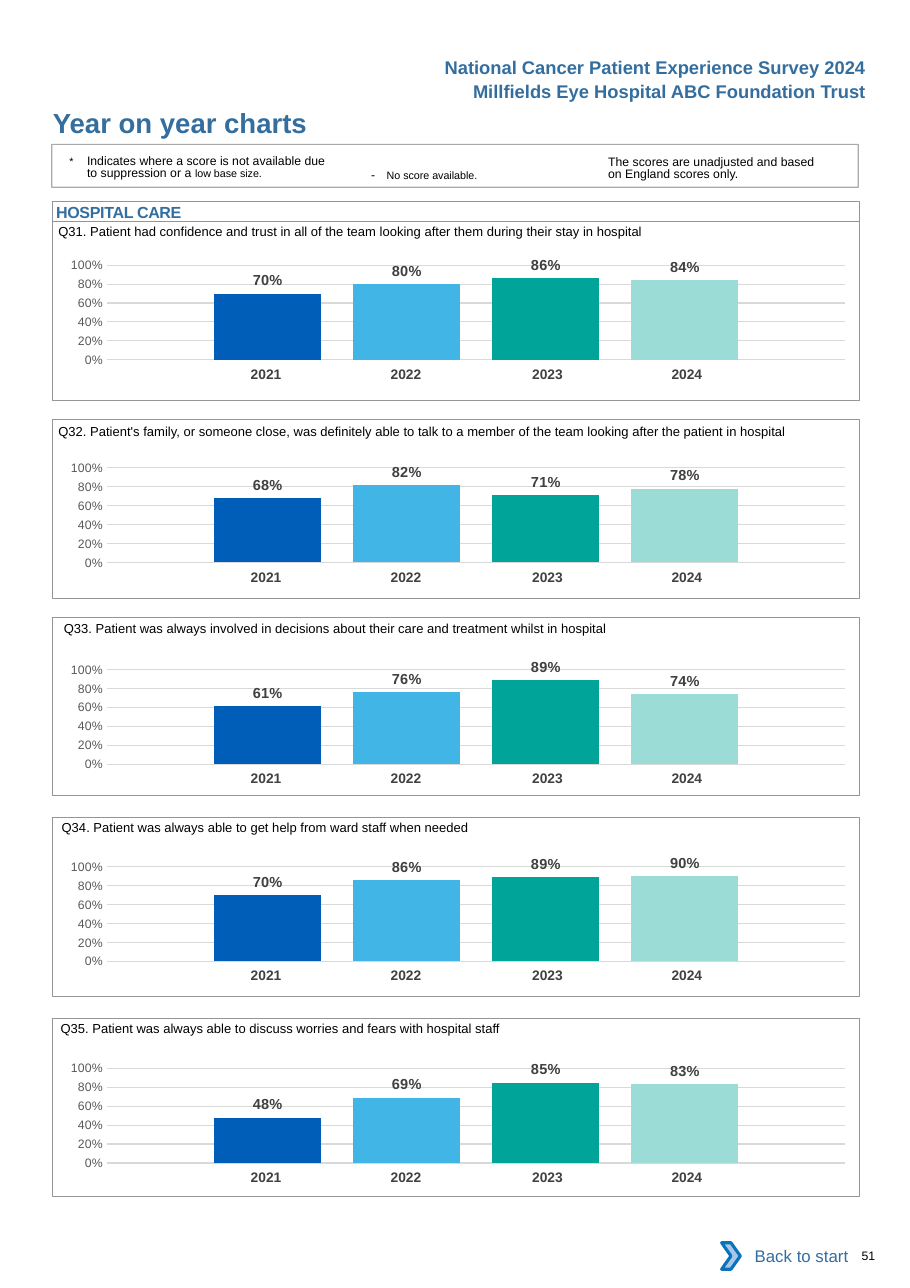
from lxml import etree
from pptx import Presentation
from pptx.chart.data import CategoryChartData
from pptx.dml.color import RGBColor
from pptx.enum import chart as ch, shapes, text
from pptx.oxml import parse_xml
from pptx.oxml.ns import nsdecls, qn
from pptx.util import Inches, Pt

BLUE = RGBColor(0x33, 0x6E, 0x9F)
BLACK = RGBColor(0, 0, 0)
WHITE = RGBColor(0xFF, 0xFF, 0xFF)
FRAME = RGBColor(0x93, 0x95, 0x98)
GRID = RGBColor(0xD9, 0xD9, 0xD9)
AXIS_TEXT = RGBColor(0x59, 0x59, 0x59)
LABEL_TEXT = RGBColor(0x40, 0x40, 0x40)
YEAR_TEXT = RGBColor(0x41, 0x40, 0x42)
ARROW_FILL = RGBColor(0xA8, 0xC7, 0xE9)
ARROW_LINE = RGBColor(0x0A, 0x74, 0xBB)
YEAR_COLORS = {
    "2021": RGBColor(0x00, 0x5E, 0xB8),
    "2022": RGBColor(0x41, 0xB6, 0xE6),
    "2023": RGBColor(0x00, 0xA4, 0x99),
    "2024": RGBColor(0x9C, 0xDC, 0xD7),
}
NO_STYLE = "{2D5ABB26-0587-4C30-8999-92F81FD0307C}"

prs = Presentation()
prs.slide_width, prs.slide_height = Inches(8.26), Inches(11.69)
slide = prs.slides.add_slide(prs.slide_layouts[6])


def write(box, lines, color=BLACK, bold=False, align=text.PP_ALIGN.LEFT,
          insets=(0, 0, 0, 0), spacing=None):
    """Fill one paragraph; each line is a list of (words, size) runs."""
    frame = box.text_frame
    frame.word_wrap = True
    frame.margin_left, frame.margin_top, frame.margin_right, frame.margin_bottom = map(Inches, insets)
    paragraph = frame.paragraphs[0]
    paragraph.alignment = align
    paragraph.line_spacing = spacing
    for number, line in enumerate(lines):
        if number:
            paragraph.add_line_break()
        for words, size in line:
            run = paragraph.add_run()
            run.text = words
            run.font.size, run.font.name, run.font.bold = Pt(size), "Arial", bold
            run.font.color.rgb = color
    return paragraph


def add_box(left, top, width, height, line=FRAME, weight=0.5, fill=None,
            kind=shapes.MSO_SHAPE.RECTANGLE):
    box = slide.shapes.add_shape(kind, Inches(left), Inches(top), Inches(width), Inches(height))
    box.shadow.inherit = False
    if fill is None:
        box.fill.background()
    else:
        box.fill.solid()
        box.fill.fore_color.rgb = fill
    if line is None:
        box.line.fill.background()
    else:
        box.line.color.rgb = line
        box.line.width = Pt(weight)
    return box


# Survey and trust names
for top, heading in [(0.46, "National Cancer Patient Experience Survey 2024"),
                     (0.68, "Millfields Eye Hospital ABC Foundation Trust")]:
    header = slide.shapes.add_textbox(Inches(3.76), Inches(top), Inches(4.2), Inches(0.3))
    write(header, [[(heading, 12)]], BLUE, True, text.PP_ALIGN.RIGHT, (0.1, 0.05, 0.1, 0.05))

# Page title
title = slide.shapes.add_textbox(Inches(0.48), Inches(0.96), Inches(4.5), Inches(0.3))
write(title, [[("Year on year charts", 18)]], BLUE, True)

# Notes on the scores
notes_frame = add_box(0.47, 1.31, 7.32, 0.39, weight=0.75)
frame_color = notes_frame.line.fill.fore_color._xFill.find(qn("a:srgbClr"))
etree.SubElement(frame_color, qn("a:alpha")).set("val", "80000")

suppressed = slide.shapes.add_textbox(Inches(0.63), Inches(1.38), Inches(2.72), Inches(0.3))
hanging = write(suppressed,
                [[("*\t", 7), ("Indicates where a score is not available due", 8)],
                 [("to suppression or a ", 8), ("low base size.", 7)]],
                insets=(0, 0.03, 0, 0), spacing=Pt(8.1))
hanging._p.get_or_add_pPr().set("marL", str(Inches(0.16)))
hanging._p.get_or_add_pPr().set("indent", str(-Inches(0.16)))

missing = slide.shapes.add_textbox(Inches(3.37), Inches(1.52), Inches(1.73), Inches(0.13))
dash = write(missing, [[("- ", 8), ("No score available.", 7)]]).runs[0]
dash.font._element.set("spc", "260")

unadjusted = slide.shapes.add_textbox(Inches(5.52), Inches(1.39), Inches(2.01), Inches(0.27))
write(unadjusted, [[("The scores are unadjusted and based", 8)], [("on England scores only.", 8)]],
      insets=(0, 0.03, 0, 0), spacing=Pt(8.1))

# Section heading
section = add_box(0.48, 1.83, 7.32, 0.18)
section.text_frame.vertical_anchor = text.MSO_ANCHOR.TOP
section_text = write(section, [[("HOSPITAL CARE", 10.5)]], BLUE, True, insets=(0.03, 0.01, 0, 0))
section_text.runs[0].font._element.set("spc", "-20")

# Questions: panel top, chart top, question left and top, wording, score per year
questions = [
    (2.01, 2.22, 0.53, 1.94, "Q31. Patient had confidence and trust in all of the team looking after them "
     "during their stay in hospital", (0.70, 0.80, 0.86, 0.84)),
    (3.81, 4.06, 0.53, 3.75, "Q32. Patient's family, or someone close, was definitely able to talk to a member "
     "of the team looking after the patient in hospital", (0.68, 0.82, 0.71, 0.78)),
    (5.60, 5.89, 0.58, 5.54, "Q33. Patient was always involved in decisions about their care and treatment "
     "whilst in hospital", (0.61, 0.76, 0.89, 0.74)),
    (7.42, 7.68, 0.56, 7.35, "Q34. Patient was always able to get help from ward staff when needed",
     (0.70, 0.86, 0.89, 0.90)),
    (9.24, 9.51, 0.55, 9.17, "Q35. Patient was always able to discuss worries and fears with hospital staff",
     (0.48, 0.69, 0.85, 0.83)),
]
for panel_top, chart_top, question_left, question_top, wording, scores in questions:
    add_box(0.48, panel_top, 7.32, 1.62)
    question = slide.shapes.add_textbox(Inches(question_left), Inches(question_top),
                                        Inches(7.2), Inches(0.24))
    write(question, [[(wording, 8.5)]], insets=(0, 0.09, 0, 0))

    # Score columns
    data = CategoryChartData(number_format="0%")
    data.categories = ["1"]
    for number, score in enumerate(scores, 1):
        data.add_series(f"Series {number}", [score])
    chart = slide.shapes.add_chart(ch.XL_CHART_TYPE.COLUMN_CLUSTERED, Inches(0.39), Inches(chart_top),
                                   Inches(7.32), Inches(1.29), data).chart
    chart.has_legend = chart.has_title = False
    chart.font.size, chart.font.name = Pt(10), "Calibri"
    chart.font.color.rgb = BLACK
    chart.category_axis.visible = False
    percent = chart.value_axis
    percent.minimum_scale, percent.maximum_scale, percent.major_unit = 0, 1, 0.2
    percent.major_tick_mark = ch.XL_TICK_MARK.NONE
    percent.format.line.fill.background()
    percent.major_gridlines.format.line.color.rgb = GRID
    percent.major_gridlines.format.line.width = Pt(0.75)
    percent.tick_labels.number_format = "0%"
    percent.tick_labels.number_format_is_linked = False
    percent.tick_labels.font.size, percent.tick_labels.font.name = Pt(8), "Arial"
    percent.tick_labels.font.color.rgb = AXIS_TEXT

    columns = chart.plots[0]
    columns.vary_by_categories = False
    columns.gap_width, columns.overlap = 200, -30
    for series, color in zip(columns.series, YEAR_COLORS.values()):
        series.format.fill.solid()
        series.format.fill.fore_color.rgb = color
        labels = series.data_labels
        labels.show_value = True
        labels.position = ch.XL_LABEL_POSITION.OUTSIDE_END
        labels.number_format, labels.number_format_is_linked = "0%", False
        labels.font.size, labels.font.name, labels.font.bold = Pt(9.5), "Arial", True
        labels.font.color.rgb = LABEL_TEXT

    # Fixed plot area inside the chart
    plot_area = chart._chartSpace.chart.plotArea
    for automatic in plot_area.findall(qn("c:layout")):
        plot_area.remove(automatic)
    plot_area.insert(0, parse_xml(
        f'<c:layout {nsdecls("c")}><c:manualLayout><c:layoutTarget val="inner"/>'
        '<c:xMode val="edge"/><c:yMode val="edge"/><c:x val="0.08"/><c:y val="0.145"/>'
        '<c:w val="0.915"/><c:h val="0.666"/></c:manualLayout></c:layout>'))

    # Years under the columns
    years = slide.shapes.add_table(1, 4, Inches(1.73), Inches(chart_top + 1.06),
                                   Inches(5.15), Inches(0.27)).table
    years.first_row = years.horz_banding = False
    years._tbl.tblPr.find(qn("a:tableStyleId")).text = NO_STYLE
    for column, (year, width, right) in enumerate(zip(YEAR_COLORS, (1.27, 1.27, 1.34, 1.27),
                                                      (0, 0, 0.04, 0.12))):
        years.columns[column].width = Inches(width)
        cell = years.cell(0, column)
        cell.fill.background()
        cell.margin_right = Inches(right)
        paragraph = cell.text_frame.paragraphs[0]
        paragraph.alignment = text.PP_ALIGN.CENTER
        run = paragraph.add_run()
        run.text = year
        run.font.size, run.font.name, run.font.bold = Pt(9), "Arial", True
        run.font.color.rgb = YEAR_TEXT

# Back to start button and page number
back = add_box(6.62, 11.19, 1.18, 0.42, line=None, fill=WHITE)
write(back, [[("Back to start", 11)]], BLUE, align=text.PP_ALIGN.RIGHT, insets=(0.1, 0.05, 0.1, 0.05))
add_box(6.55, 11.28, 0.17, 0.24, ARROW_LINE, 2, ARROW_FILL, shapes.MSO_SHAPE.CHEVRON)
page = slide.shapes.add_textbox(Inches(7.82), Inches(11.33), Inches(0.4), Inches(0.13))
write(page, [[("51", 8)]])

prs.save("out.pptx")
